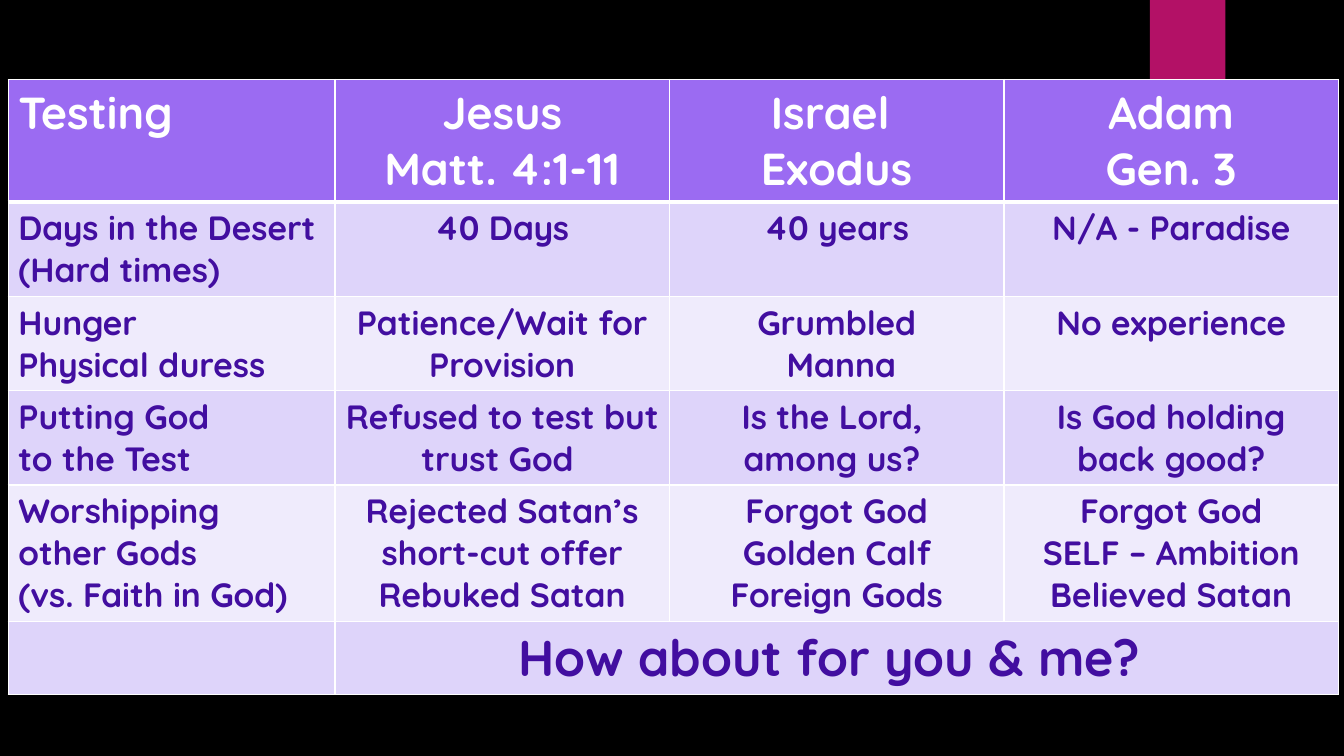
from lxml import etree
from pptx import Presentation
from pptx.dml.color import RGBColor
from pptx.enum import shapes, text
from pptx.oxml.ns import qn
from pptx.util import Cm, Pt

HEADER, DARK_BAND, LIGHT_BAND = "9B6BF2", "DED4FA", "EFEBFC"
WHITE, INDIGO = "FFFFFF", "420EA0"


def paint(fill, color):
    fill.solid()
    fill.fore_color.rgb = RGBColor.from_string(color)


def write(cell, content, size=24, color=INDIGO, align=text.PP_ALIGN.CENTER):
    cell.text = content
    for para in cell.text_frame.paragraphs:
        para.alignment = align
        for span in para.runs:
            span.font.name = "Quicksand"
            span.font.size = Pt(size)
            span.font.bold = True
            span.font.color.rgb = RGBColor.from_string(color)


deck = Presentation()
deck.slide_width, deck.slide_height = Cm(33.87), Cm(19.05)
page = deck.slides.add_slide(deck.slide_layouts[6])
paint(page.background.fill, "000000")

# Accent tab at the top
tab = page.shapes.add_shape(
    shapes.MSO_SHAPE.RECTANGLE, Cm(28.98), Cm(0), Cm(1.9), Cm(3.18))
tab.shadow.inherit = False
paint(tab.fill, "B31166")
tab.line.fill.background()

# Comparison table
rows = [
    ["Testing", "Jesus\nMatt. 4:1-11", "Israel \nExodus", "Adam\nGen. 3"],
    ["Days in the Desert (Hard times)", "40 Days", "40 years", "N/A - Paradise"],
    ["Hunger\nPhysical duress", "Patience/Wait for Provision",
     "Grumbled\n Manna", "No experience"],
    ["Putting God\nto the Test", "Refused to test but trust God ",
     "Is the Lord, \namong us? ", "Is God holding\nback good?"],
    ["Worshipping\nother Gods\n(vs. Faith in God)",
     "Rejected Satan’s short-cut offer\nRebuked Satan",
     "Forgot God\nGolden Calf\nForeign Gods",
     "Forgot God\nSELF – Ambition\nBelieved Satan"],
    ["", "How about for you & me? ", "", ""],
]
widths = [8.23, 8.43, 8.43, 8.43]
heights = [3.07, 2.39, 2.37, 2.37, 3.43, 1.84]
table = page.shapes.add_table(
    len(rows), len(widths), Cm(0.21), Cm(2), Cm(sum(widths)), Cm(sum(heights))).table
for column, width in zip(table.columns, widths):
    column.width = Cm(width)
for row, height in zip(table.rows, heights):
    row.height = Cm(height)

for r, row in enumerate(rows):
    band = HEADER if r == 0 else DARK_BAND if r % 2 else LIGHT_BAND
    size = {0: 32, len(rows) - 1: 36}.get(r, 24)
    for c, content in enumerate(row):
        cell = table.cell(r, c)
        write(cell, content, size=size, color=WHITE if r == 0 else INDIGO,
              align=text.PP_ALIGN.CENTER if c else text.PP_ALIGN.LEFT)

        # White borders, thicker around the header's lower edge
        properties = cell._tc.get_or_add_tcPr()
        for side in ("lnL", "lnR", "lnT", "lnB"):
            thick = (r, side) in ((0, "lnB"), (1, "lnT"))
            line = etree.SubElement(
                properties, qn(f"a:{side}"), w=str(Pt(3 if thick else 1)))
            solid = etree.SubElement(line, qn("a:solidFill"))
            etree.SubElement(solid, qn("a:srgbClr"), val=WHITE)
        paint(cell.fill, band)

# Closing question across the last three columns
table.cell(5, 1).merge(table.cell(5, 3))

deck.save("out.pptx")
